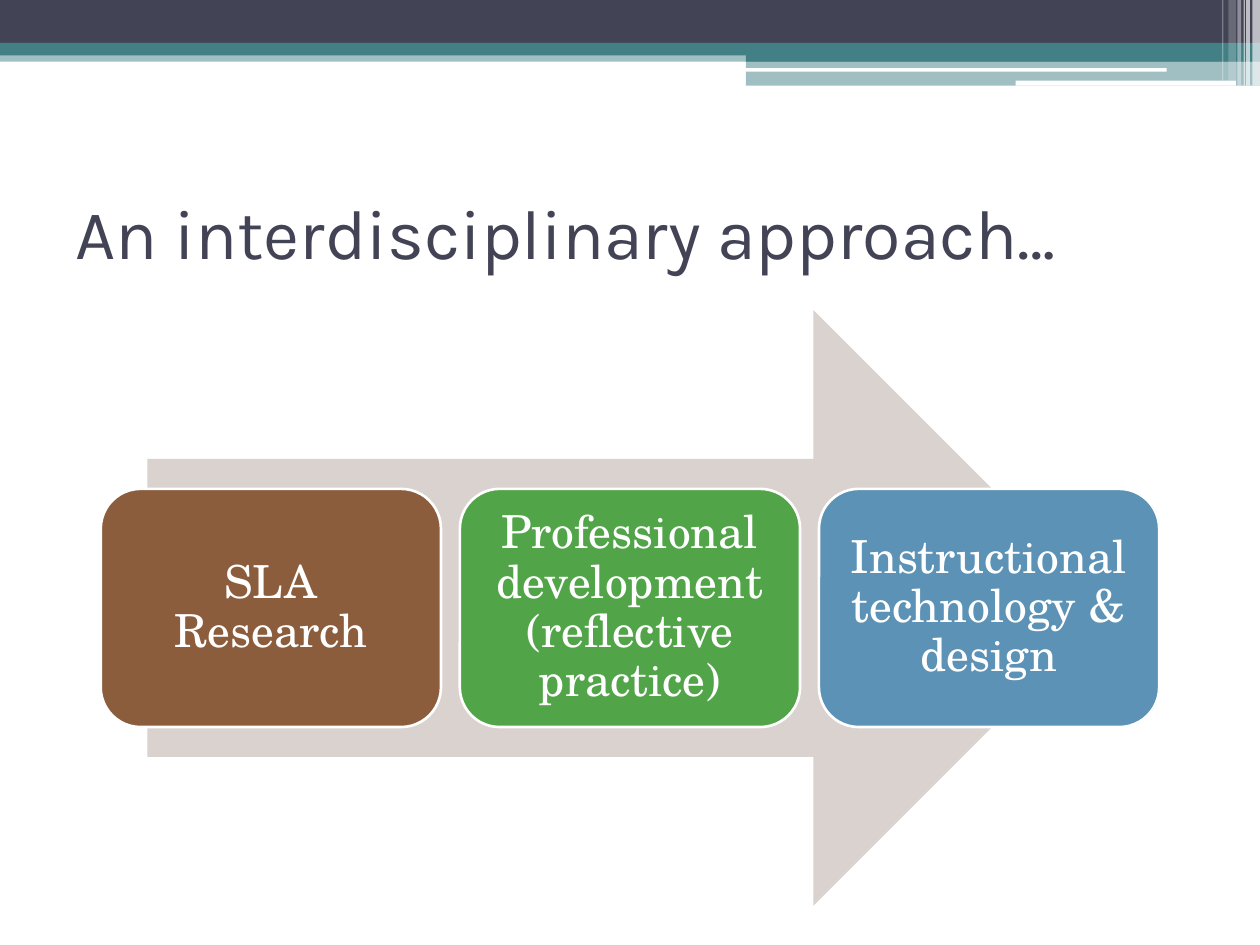
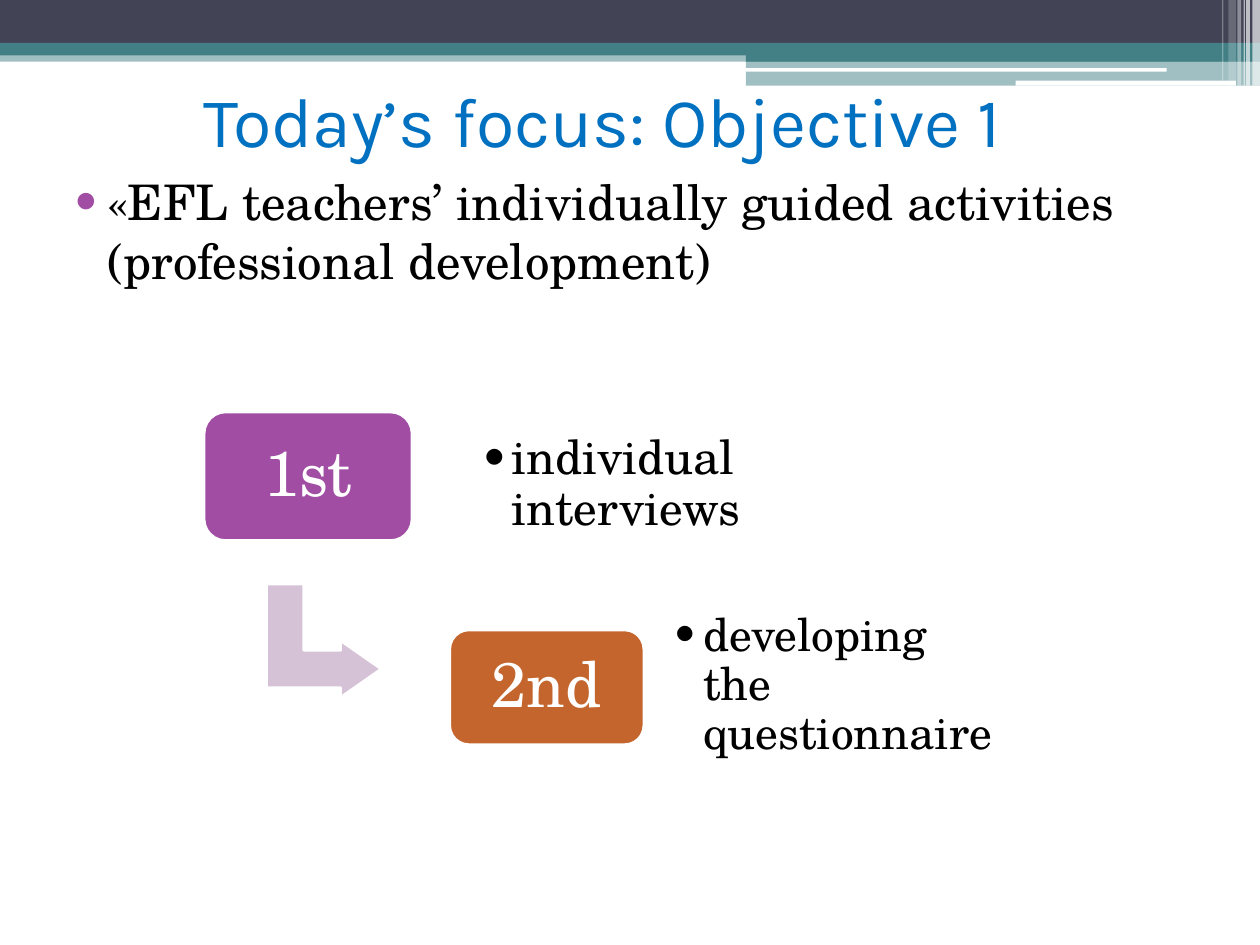
from lxml.etree import SubElement
from pptx import Presentation
from pptx.dml.color import RGBColor
from pptx.enum.shapes import MSO_SHAPE
from pptx.enum.text import MSO_ANCHOR, MSO_AUTO_SIZE, PP_ALIGN
from pptx.oxml.ns import qn
from pptx.util import Inches, Pt

COLORS = {
    "navy": "424456", "teal": "438086", "white": "FFFFFF", "black": "000000",
    "blue": "0070C0", "brown": "8B5D3D", "green": "52A449", "steel": "5C92B5",
    "purple": "A04DA3", "orange": "C4652D", "sand": "DAD2CE", "lilac": "D6C2D7",
}
HEAD_FONT, BODY_FONT = "Karla", "TeX Gyre Schola"
COLUMNS, ROWS = 10, 7.5
TITLE_ONLY, TITLE_AND_BODY = 5, 1
ROUNDING = 0.167

# left, top, width, height, colour, opacity in percent
BANDS = [
    (0, 0.4, 10, 0.09, "teal", 50),
    (0, 0, 10, 0.34, "navy", 100),
    (0, 0.34, 10, 0.1, "teal", 100),
    (5.92, 0.39, 4.08, 0.1, "teal", 100),
    (5.92, 0.48, 4.08, 0.2, "teal", 50),
    (5.91, 0.54, 3.35, 0.03, "white", 100),
    (8.06, 0.64, 1.75, 0.04, "white", 100),
]
# left, width, height, opacity of the white stripes in the corner
STRIPES = [
    (9.94, 0.06, 0.68, 65), (9.89, 0.03, 0.68, 65), (9.87, 0.01, 0.68, 60),
    (9.82, 0.03, 0.68, 40), (9.75, 0.06, 0.64, 20), (9.7, 0.01, 0.64, 30),
]


def rgb(name):
    return RGBColor.from_string(COLORS[name])


class Deck:
    """Holds the presentation, its style and the current slide."""

    def __init__(self):
        self.prs = Presentation()
        self.prs.slide_width, self.prs.slide_height = Inches(10), Inches(7.5)
        self.slide = None

    def new_slide(self, layout):
        self.slide = self.prs.slides.add_slide(self.prs.slide_layouts[layout])

    def frame(self, left, top, width, height):
        """Turn grid columns and rows into slide lengths."""
        col = self.prs.slide_width / COLUMNS
        row = self.prs.slide_height / ROWS
        return [round(n) for n in (left * col, top * row, width * col, height * row)]

    def place(self, holder, box):
        holder.left, holder.top, holder.width, holder.height = self.frame(*box)

    def shape(self, kind, box, color, opacity=100, outline=False, adj=()):
        sp = self.slide.shapes.add_shape(kind, *self.frame(*box))
        sp.shadow.inherit = False
        for i, value in enumerate(adj):
            sp.adjustments[i] = value
        sp.fill.solid()
        sp.fill.fore_color.rgb = rgb(color)
        if opacity < 100:
            clr = sp.element.xpath("./p:spPr/a:solidFill/a:srgbClr")[0]
            SubElement(clr, qn("a:alpha")).set("val", str(opacity * 1000))
        if outline:
            sp.line.color.rgb = rgb("white")
            sp.line.width = Pt(1.5)
        else:
            sp.line.fill.background()
        return sp

    def master_bands(self):
        """Draw the top bands and move them behind everything on the master."""
        stripes = [(x, 0, w, h, "white", a) for x, w, h, a in STRIPES]
        tree = self.prs.slide_master.shapes.element
        for i, (*box, color, opacity) in enumerate(BANDS + stripes):
            sp = self.shape(MSO_SHAPE.RECTANGLE, box, color, opacity)
            sp.element.nvSpPr.cNvPr.set("id", str(100 + i))
            tree.insert(2 + i, sp.element)

    def add_text(self, tf, text, size, color, font=BODY_FONT,
                 align=PP_ALIGN.LEFT, anchor=MSO_ANCHOR.MIDDLE, spacing=0.9, inset=None):
        tf.word_wrap = True
        tf.auto_size = MSO_AUTO_SIZE.NONE
        tf.vertical_anchor = anchor
        if inset is not None:
            tf.margin_left = tf.margin_right = Inches(inset)
            tf.margin_top = tf.margin_bottom = Inches(inset)
        p = tf.paragraphs[0]
        p.alignment, p.line_spacing = align, spacing
        r = p.add_run()
        r.text = text
        r.font.name, r.font.size = font, Pt(size)
        r.font.color.rgb = rgb(color)
        return p

    def bullet(self, p, margin, hanging, color):
        pPr = p._p.get_or_add_pPr()
        pPr.set("marL", str(Inches(margin)))
        pPr.set("indent", str(-Inches(hanging)))
        clr = SubElement(pPr, qn("a:buClr"))
        SubElement(clr, qn("a:srgbClr")).set("val", COLORS[color])
        SubElement(pPr, qn("a:buFont")).set("typeface", BODY_FONT)
        SubElement(pPr, qn("a:buChar")).set("char", "•")

    def title(self, text, box, color, align=PP_ALIGN.LEFT):
        holder = self.slide.shapes.title
        self.place(holder, box)
        self.add_text(holder.text_frame, text, 40, color, HEAD_FONT, align, spacing=1.0)

    def body(self, text, box):
        holder = self.slide.placeholders[1]
        self.place(holder, box)
        p = self.add_text(holder.text_frame, text, 28, "black",
                          anchor=MSO_ANCHOR.TOP, spacing=1.0)
        p.space_before = Pt(3)
        self.bullet(p, 0.4, 0.28, "purple")

    def card(self, text, box, color, size, inset):
        sp = self.shape(MSO_SHAPE.ROUNDED_RECTANGLE, box, color,
                        outline=True, adj=[ROUNDING])
        self.add_text(sp.text_frame, text, size, "white",
                      align=PP_ALIGN.CENTER, inset=inset)

    def note(self, text, box, size, inset):
        tb = self.slide.shapes.add_textbox(*self.frame(*box))
        p = self.add_text(tb.text_frame, text, size, "black", inset=inset)
        self.bullet(p, 0.25, 0.25, "black")


def approach_slide(deck):
    deck.title("An interdisciplinary approach…", (0.5, 1.25, 9, 1.17), "navy")
    deck.shape(MSO_SHAPE.RIGHT_ARROW, (1.17, 2.46, 7.65, 4.73), "sand")
    fields = [
        ("SLA Research", "brown"),
        ("Professional development (reflective practice)", "green"),
        ("Instructional technology & design", "steel"),
    ]
    width, gap = 2.7, 0.15
    for i, (text, color) in enumerate(fields):
        deck.card(text, (0.8 + i * (width + gap), 3.88, width, 1.89), color, 26, 0.11)


def objective_slide(deck):
    deck.title("Today’s focus: Objective 1", (0.28, 0.36, 9, 1.17), "blue",
               PP_ALIGN.CENTER)
    deck.body("«EFL teachers’ individually guided activities "
              "(professional development)", (0.35, 1.31, 9, 4.73))
    arrow = deck.shape(MSO_SHAPE.BENT_UP_ARROW, (2.12, 4.63, 0.9, 0.91), "lilac",
                       outline=True, adj=[0.328, 0.25, 0.358])
    arrow.rotation = 90
    deck.card("1st", (1.62, 3.27, 1.65, 1.02), "purple", 36, 0.15)
    deck.note("individual interviews", (3.66, 3.36, 4.19, 0.98), 27, 0.15)
    deck.card("2nd", (3.57, 5, 1.54, 0.91), "orange", 36, 0.15)
    deck.note("developing the questionnaire", (5.19, 4.77, 2.94, 1.34), 26, 0.14)


def main():
    deck = Deck()
    deck.new_slide(TITLE_ONLY)
    deck.master_bands()
    approach_slide(deck)
    deck.new_slide(TITLE_AND_BODY)
    objective_slide(deck)
    deck.prs.save("out.pptx")


if __name__ == "__main__":
    main()
